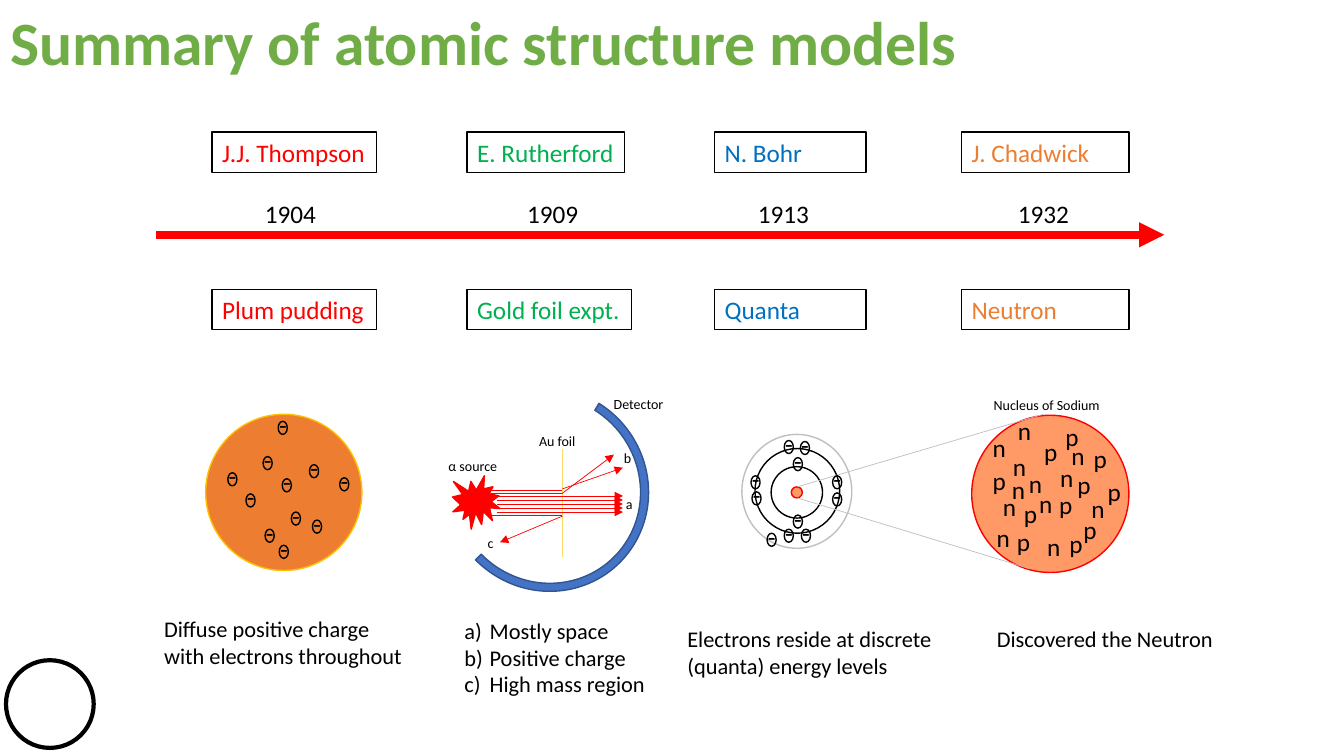
from dataclasses import dataclass
from typing import NamedTuple

import pptx
import pptx.dml.color
import pptx.enum.shapes
import pptx.enum.text
import pptx.oxml
import pptx.oxml.ns
import pptx.util

SHAPES = pptx.enum.shapes.MSO_SHAPE
COLUMNS, ROWS = 133.33, 75
CELL = pptx.util.Inches(0.1)


@dataclass(frozen=True)
class Theme:
    font: str = "Calibri"
    title_size: float = 44
    label_size: float = 18
    note_size: float = 16
    caption_size: float = 10
    thin: float = 0.5
    outline: float = 1
    ring: float = 3
    axis: float = 6
    ink: str = "000000"
    paper: str = "FFFFFF"
    title: str = "70AD47"
    red: str = "FF0000"
    green: str = "00B050"
    blue: str = "0070C0"
    orange: str = "ED7D31"
    gold: str = "FFC000"
    foil: str = "FFD966"
    nucleus: str = "FF9966"
    grey: str = "BFBFBF"
    detector: str = "4472C4"
    detector_edge: str = "325491"


class Box(NamedTuple):
    left: float
    top: float
    width: float
    height: float


class Era(NamedTuple):
    person: str
    year: str
    idea: str
    color: str
    left: float
    person_width: float
    idea_width: float
    year_left: float


class Ray(NamedTuple):
    start: tuple[float, float]
    end: tuple[float, float]
    color: str
    width: float
    arrow: bool = False


class Note(NamedTuple):
    lines: list[str]
    box: Box
    lettered: bool = False


THEME = Theme()
ERAS = [
    Era("J.J. Thompson", "1904", "Plum pudding", THEME.red, 21.05, 16.3, 16.3, 25.3),
    Era("E. Rutherford", "1909", "Gold foil expt.", THEME.green, 46.35, 15.6, 16.3, 51.3),
    Era("N. Bohr", "1913", "Quanta", THEME.blue, 70.9, 15, 15, 74.2),
    Era("J. Chadwick", "1932", "Neutron", THEME.orange, 95.4, 16.6, 16.6, 100),
]
PERSON_ROW, YEAR_ROW, AXIS_ROW, IDEA_ROW, LABEL_ROWS = 13.1, 19.15, 23.3, 28.7, 4

PUDDING_ELECTRONS = [
    (26.1, 45.3), (28, 47.5), (30.7, 46.1), (26.3, 52.5), (28.9, 50.8), (24.4, 49),
    (31, 51.6), (27.6, 41.8), (27.7, 54.1), (22.6, 46.9), (33.7, 47.4),
]
SHELL_ELECTRONS = [
    (78.7, 45.4), (78.7, 51.1), (82.6, 47.2), (82.6, 48.9), (74.6, 48.8), (74.5, 47.2),
    (76.1, 52.9), (77.8, 52.5), (79.5, 52.5), (79.4, 43.8), (77.8, 43.7),
]
NUCLEONS = {
    "n": [
        (98.5, 48.3), (99.5, 44.3), (102.9, 52.2), (104.2, 45.4), (101.1, 46), (107.3, 48.4),
        (97.5, 42.4), (105.3, 43.2), (97.9, 51.3), (102.1, 48), (100, 40.7), (99.4, 46.6),
    ],
    "p": [
        (104.1, 48.1), (100.6, 48.9), (102.6, 42.8), (106.5, 50.5), (99.9, 51.7), (107.5, 43.5),
        (104.7, 41.3), (105.9, 46.1), (108.9, 46.8), (97.5, 45.7), (105.1, 51.9),
    ],
}
RAYS = [
    Ray((15.5, AXIS_ROW), (115.5, AXIS_ROW), THEME.red, THEME.axis, True),
    Ray((55.8, 44.5), (55.8, 55.3), THEME.foil, THEME.thin),
    *[Ray((49.3, 49.2 + 0.4 * i), (61.8, 49.2 + 0.4 * i), THEME.red, THEME.thin, True) for i in range(5)],
    *[Ray((48.7, row), (55.8, row), THEME.red, THEME.thin) for row in (48.6, 48.9, 51.1)],
    Ray((55.8, 48.5), (61.8, 46.4), THEME.red, THEME.thin, True),
    Ray((55.7, 49), (60.9, 45.1), THEME.red, THEME.thin, True),
    Ray((55.8, 51.2), (49.6, 53.8), THEME.red, THEME.thin, True),
    Ray((79.1, 48.3), (103.5, 41.1), THEME.grey, THEME.thin),
    Ray((79.1, 49.4), (102.1, 56.4), THEME.grey, THEME.thin),
]
CAPTIONS = [
    ("a", 61.1, 48.7, 3.1), ("b", 60.9, 44.1, 3.1), ("c", 47.4, 52.5, 3.1),
    ("α source", 43.5, 44.9, 6.9), ("Au foil", 52.5, 42.4, 6.9),
    ("Detector", 59.9, 38.7, 7.8), ("Nucleus of Sodium", 97.6, 38.8, 13.8),
]
NOTES = [
    Note(["Diffuse positive charge with electrons throughout"], Box(15.3, 60.5, 25.7, 6.4)),
    Note(["Mostly space", "Positive charge", "High mass region"], Box(45.1, 60.7, 22.3, 9.1), True),
    Note(["Electrons reside at discrete (quanta) energy levels"], Box(67.2, 61.5, 27.2, 6.4)),
    Note(["Discovered the Neutron"], Box(97.9, 61.5, 25.8, 3.7)),
]


def cells(*counts: float) -> list[int]:
    return [round(count * CELL) for count in counts]


def rgb(color: str) -> pptx.dml.color.RGBColor:
    return pptx.dml.color.RGBColor.from_string(color)


def write(holder, lines: list[str], size: float, color: str = THEME.ink, lettered: bool = False,
          tight: bool = True, bold: bool = False) -> None:
    frame = holder.text_frame
    frame.word_wrap = True
    frame.auto_size = pptx.enum.text.MSO_AUTO_SIZE.NONE
    frame.vertical_anchor = pptx.enum.text.MSO_ANCHOR.TOP
    if tight:
        frame.margin_right = 0
    for index, line in enumerate(lines):
        paragraph = frame.add_paragraph() if index else frame.paragraphs[0]
        paragraph.alignment = pptx.enum.text.PP_ALIGN.LEFT
        if lettered:
            properties = paragraph._p.get_or_add_pPr()
            properties.set("marL", str(pptx.util.Inches(0.25)))
            properties.set("indent", str(-pptx.util.Inches(0.25)))
            letter = pptx.oxml.ns.qn("a:buAutoNum")
            properties.append(properties.makeelement(letter, {"type": "alphaLcParenR"}))
        run = paragraph.add_run()
        run.text = line
        run.font.name = THEME.font
        run.font.size = pptx.util.Pt(size)
        run.font.bold = bold
        run.font.color.rgb = rgb(color)


def draw(shapes, kind, box: Box, line: str, fill: str | None = None, width: float = THEME.outline):
    figure = shapes.add_shape(kind, *cells(*box))
    figure.shadow.inherit = False
    if fill:
        figure.fill.solid()
        figure.fill.fore_color.rgb = rgb(fill)
    else:
        figure.fill.background()
    figure.line.color.rgb = rgb(line)
    figure.line.width = pptx.util.Pt(width)
    return figure


def text(shapes, line: str, box: Box, size: float) -> None:
    write(shapes.add_textbox(*cells(*box)), [line], size)


def electron(shapes, left: float, top: float) -> None:
    group = shapes.add_group_shape()
    draw(group.shapes, SHAPES.OVAL, Box(left, top, 0.9, 1.3), THEME.ink)
    text(group.shapes, "-", Box(left - 0.9, top - 1.7, 3.9, LABEL_ROWS), THEME.label_size)


def trace(shapes, ray: Ray) -> None:
    straight = pptx.enum.shapes.MSO_CONNECTOR.STRAIGHT
    connector = shapes.add_connector(straight, *cells(*ray.start, *ray.end))
    connector.line.color.rgb = rgb(ray.color)
    connector.line.width = pptx.util.Pt(ray.width)
    properties = connector._element.spPr
    if ray.arrow:
        stroke = properties.find(pptx.oxml.ns.qn("a:ln"))
        stroke.append(stroke.makeelement(pptx.oxml.ns.qn("a:tailEnd"), {"type": "triangle"}))
    properties.append(properties.makeelement(pptx.oxml.ns.qn("a:effectLst"), {}))


def main() -> None:
    deck = pptx.Presentation()
    deck.slide_width, deck.slide_height = cells(COLUMNS, ROWS)
    slide = deck.slides.add_slide(deck.slide_layouts[5])
    shapes = slide.shapes

    heading = shapes.title
    heading.left, heading.top, heading.width, heading.height = cells(0, -2.7, 124.2, 14.5)
    write(heading, ["Summary of atomic structure models"], THEME.title_size, THEME.title, bold=True)
    heading.text_frame.vertical_anchor = pptx.enum.text.MSO_ANCHOR.MIDDLE
    heading.text_frame.paragraphs[0].line_spacing = 0.9

    draw(shapes, SHAPES.OVAL, Box(0.6, 65.5, 8.7, 8.7), THEME.ink, THEME.paper, THEME.ring)
    for era in ERAS:
        for label, row, width in ((era.person, PERSON_ROW, era.person_width), (era.idea, IDEA_ROW, era.idea_width)):
            plate = draw(shapes, SHAPES.RECTANGLE, Box(era.left, row, width, LABEL_ROWS), THEME.ink, THEME.paper)
            write(plate, [label], THEME.label_size, era.color)
        text(shapes, era.year, Box(era.year_left, YEAR_ROW, 9.8, LABEL_ROWS), THEME.label_size)

    draw(shapes, SHAPES.OVAL, Box(20.4, 41.1, 15.5, 15.5), THEME.gold, THEME.orange)
    draw(shapes, SHAPES.OVAL, Box(74.9, 44.5, 8.4, 8.4), THEME.ink)
    draw(shapes, SHAPES.OVAL, Box(76.5, 46.3, 5.1, 5.1), THEME.ink)
    draw(shapes, SHAPES.OVAL, Box(78.5, 48.3, 1.1, 1.1), THEME.red, THEME.nucleus)
    draw(shapes, SHAPES.OVAL, Box(73.6, 43.1, 10.9, 11.3), THEME.grey)
    draw(shapes, SHAPES.EXPLOSION1, Box(44.9, 47.2, 4.7, 5.3), THEME.red, THEME.red)
    detector = draw(shapes, SHAPES.BLOCK_ARC, Box(44.3, 38.3, 19.9, 20.5), THEME.detector_edge, THEME.detector)
    detector.rotation = 137.4
    for index, value in enumerate((98.29, 214.76, 0.04)):
        detector.adjustments[index] = value
    draw(shapes, SHAPES.OVAL, Box(96.4, 41.2, 15.6, 15.6), THEME.red, THEME.nucleus)

    for ray in RAYS:
        trace(shapes, ray)
    for left, top in PUDDING_ELECTRONS + SHELL_ELECTRONS:
        electron(shapes, left, top)
    for nucleon, places in NUCLEONS.items():
        for left, top in places:
            text(shapes, nucleon, Box(left, top, 3.6, LABEL_ROWS), THEME.label_size)
    for caption, left, top, width in CAPTIONS:
        text(shapes, caption, Box(left, top, width, 2.7), THEME.caption_size)
    for note in NOTES:
        holder = shapes.add_textbox(*cells(*note.box))
        write(holder, note.lines, THEME.note_size, lettered=note.lettered, tight=False)

    deck.save("out.pptx")


if __name__ == "__main__":
    main()
